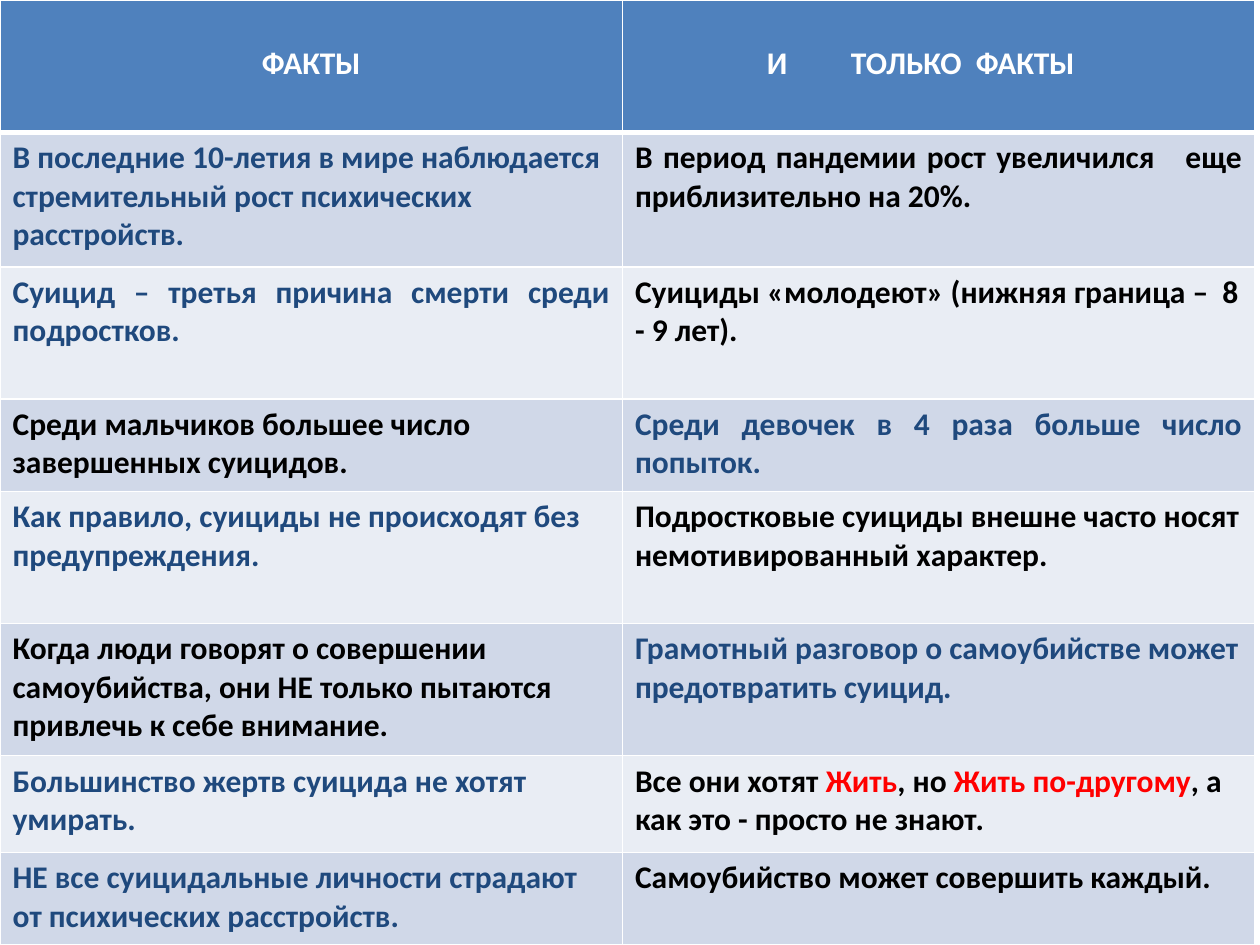
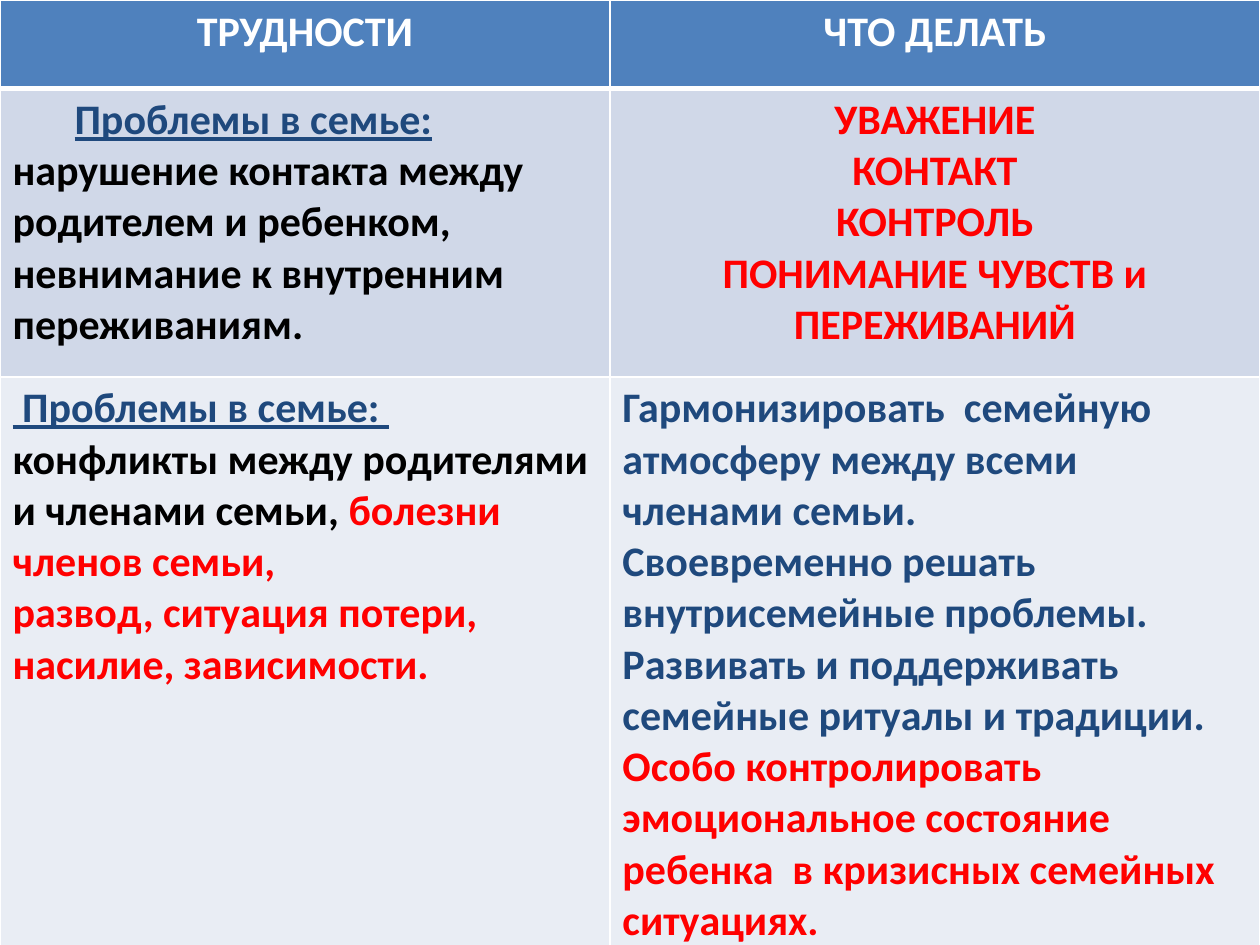
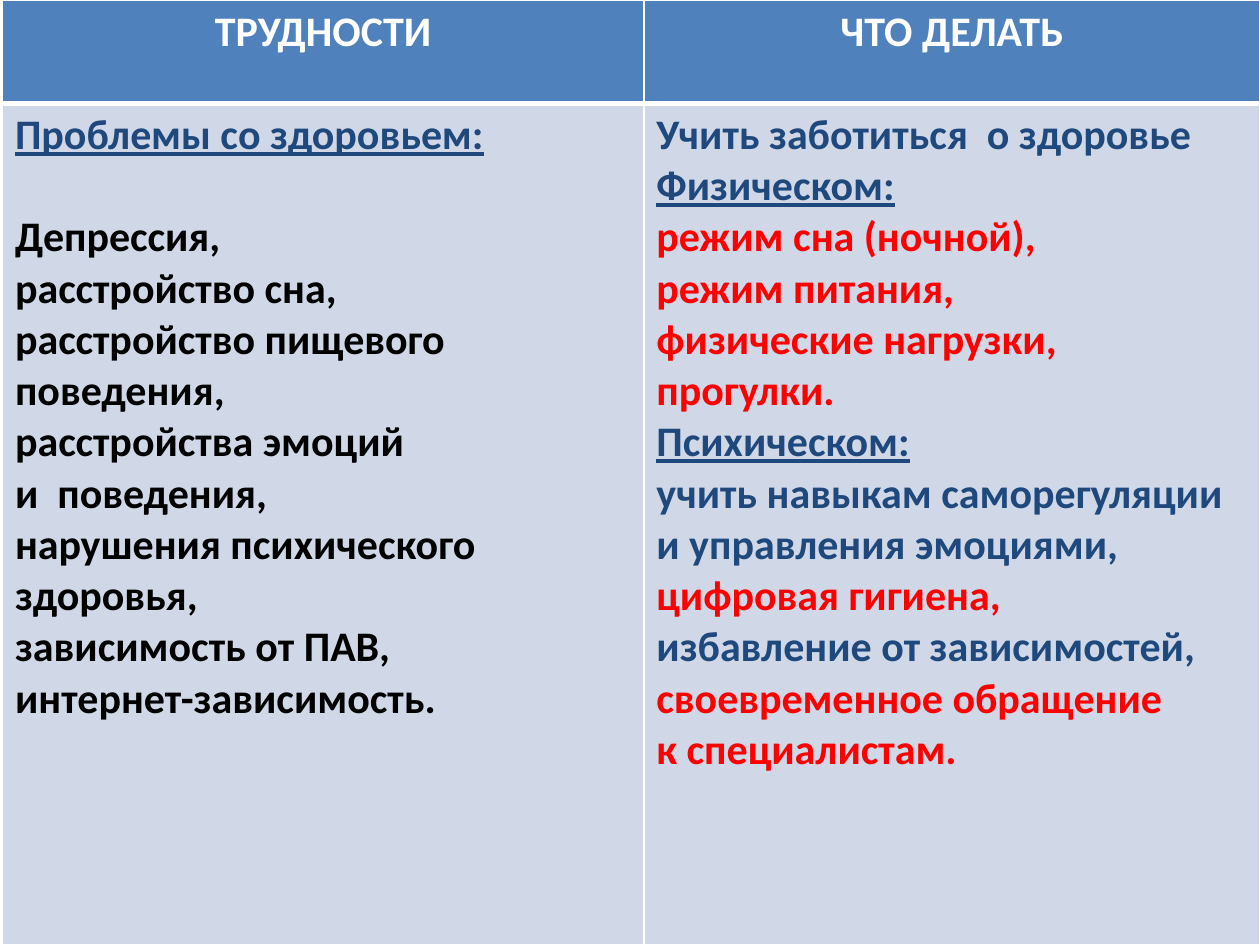
"""Builds three table slides on facts, difficulties and remedies."""
from lxml import etree
from pptx import Presentation
from pptx.dml import color as dml
from pptx.enum import text
from pptx.oxml import ns
from pptx.util import Pt

HUES = {
    "head": "4F81BD",
    "dark": "D0D8E8",
    "light": "E9EDF4",
    "white": "FFFFFF",
    "blue": "1F497D",
    "black": "000000",
    "red": "FF0000",
}
FONT = "Calibri"
MID, JUST = text.PP_ALIGN.CENTER, text.PP_ALIGN.JUSTIFY
PAGE = (720, 540)


def rgb(hue):
    """Give the colour stored under a name."""
    return dml.RGBColor.from_string(HUES[hue])


def write(par, words, size=18, hue="black", bold=True, under=False):
    """Add words to a paragraph, with a line break at each newline."""
    for i, line in enumerate(words.split("\n")):
        if i:
            par.add_line_break()
        run = par.add_run()
        run.text = line
        font = run.font
        font.name, font.size = FONT, Pt(size)
        font.bold, font.underline = bold, under
        font.color.rgb = rgb(hue)


def para(*runs, align=None, indent=0, after=0, tab=0):
    """Describe a paragraph of (hue, words) or (hue, words, under) runs."""
    return dict(runs=runs, align=align, indent=indent, after=after, tab=tab)


def lines(hue, *texts, align=None):
    """Describe one paragraph for each text, all in one hue."""
    return [para((hue, words), align=align) for words in texts]


class Deck:
    """Holds the style and the current slide."""

    def __init__(self):
        """Start an empty deck."""
        self.show = Presentation()
        self.show.slide_width, self.show.slide_height = map(Pt, PAGE)
        self.slide = None

    def page(self):
        """Add a blank slide."""
        self.slide = self.show.slides.add_slide(self.show.slide_layouts[6])

    def edge(self, cell, side, width):
        """Draw a white border on one side of a cell."""
        line = etree.SubElement(cell._tc.get_or_add_tcPr(), ns.qn("a:ln" + side), w=str(Pt(width)))
        fill = etree.SubElement(line, ns.qn("a:solidFill"))
        etree.SubElement(fill, ns.qn("a:srgbClr"), val=HUES["white"])

    def fill(self, cell, paras, size):
        """Write the described paragraphs into a cell."""
        frame = cell.text_frame
        for i, spec in enumerate(paras):
            par = frame.add_paragraph() if i else frame.paragraphs[0]
            par.alignment = spec["align"]
            if spec["after"]:
                par.space_after = Pt(spec["after"])
            props = par._p.get_or_add_pPr()
            if spec["indent"]:
                props.set("indent", str(Pt(spec["indent"])))
            if spec["tab"]:
                stops = etree.SubElement(props, ns.qn("a:tabLst"))
                etree.SubElement(stops, ns.qn("a:tab"), pos=str(Pt(spec["tab"])), algn="l")
            for hue, words, *under in spec["runs"]:
                write(par, words, size=size, hue=hue, under=bool(under))

    def table(self, cols, rows, cells, size, left=0):
        """Add a banded table with a header row."""
        shape = self.slide.shapes.add_table(
            len(rows), len(cols), Pt(left), 0, Pt(sum(cols)), Pt(sum(rows)))
        grid = shape.table
        for col, width in zip(grid.columns, cols):
            col.width = Pt(width)
        for r, (height, row) in enumerate(zip(rows, cells)):
            grid.rows[r].height = Pt(height)
            band = "head" if r == 0 else "dark" if r % 2 else "light"
            for c, paras in enumerate(row):
                cell = grid.cell(r, c)
                for side in "LRTB":
                    thick = (r, side) in ((0, "B"), (1, "T"))
                    self.edge(cell, side, 3 if thick else 1)
                cell.fill.solid()
                cell.fill.fore_color.rgb = rgb(band)
                self.fill(cell, paras, size)
        return grid


def facts(deck):
    """Build the slide of facts."""
    deck.page()
    cells = [
        (lines("white", "ФАКТЫ", align=MID),
         [para(("white", "И\tТОЛЬКО  ФАКТЫ"), tab=48)]),
        (lines("blue", "В последние 10-летия в мире наблюдается стремительный рост психических расстройств."),
         lines("black", "В период пандемии рост увеличился   еще приблизительно на 20%.", align=JUST)),
        (lines("blue", "Суицид – третья причина смерти среди подростков.", align=JUST),
         lines("black", "Суициды «молодеют» (нижняя граница –  8 - 9 лет).")),
        (lines("black", "Среди мальчиков большее число завершенных суицидов."),
         lines("blue", "Среди девочек в 4 раза больше число попыток.", align=JUST)),
        (lines("blue", "Как правило, суициды не происходят без предупреждения."),
         lines("black", "Подростковые суициды внешне часто носят немотивированный характер.")),
        (lines("black", "Когда люди говорят о совершении самоубийства, они НЕ только пытаются "
               "привлечь к себе внимание."),
         lines("blue", "Грамотный разговор о самоубийстве может предотвратить суицид.")),
        (lines("blue", "Большинство жертв суицида не хотят умирать."),
         [para(("black", "Все они хотят "), ("red", "Жить"), ("black", ", но "),
               ("red", "Жить по-другому"), ("black", ", а как это - просто не знают."))]),
        (lines("blue", "НЕ все суицидальные личности страдают от психических расстройств."),
         lines("black", "Самоубийство может совершить каждый.")),
    ]
    rows = (75.6, 77, 75.6, 52.6, 75.6, 75.6, 55.4, 52.6)
    grid = deck.table((355.7, 361.4), rows, cells, size=18)
    for cell in grid.rows[0].cells:
        cell.margin_top = Pt(25.6)
    grid.cell(0, 1).margin_left = Pt(82.6)


def pair():
    """Give the header row of the two advice slides."""
    return [lines("white", words, align=MID) for words in ("ТРУДНОСТИ", "ЧТО ДЕЛАТЬ")]


def family(deck):
    """Build the slide on family problems."""
    deck.page()
    cells = [
        pair(),
        ([para(("blue", "Проблемы в семье: ", True),
               ("black", "нарушение контакта между родителем и ребенком, "
                "невнимание к внутренним переживаниям."), indent=35.4)],
         lines("red", "УВАЖЕНИЕ", "КОНТАКТ", "КОНТРОЛЬ", "ПОНИМАНИЕ ЧУВСТВ и ПЕРЕЖИВАНИЙ", align=MID)),
        ([para(("blue", " Проблемы в семье: ", True)),
          para(("black", "конфликты между родителями и членами семьи, "), ("red", "болезни членов семьи,")),
          para(("red", "развод, ситуация потери, насилие, зависимости."))],
         lines("blue", "Гармонизировать  семейную атмосферу между всеми членами семьи.",
               "Своевременно решать внутрисемейные проблемы.",
               "Развивать и поддерживать семейные ритуалы и традиции.")
         + lines("red", "Особо контролировать эмоциональное состояние ребенка  "
                 "в кризисных семейных ситуациях.")),
    ]
    deck.table((348.5, 371.5), (50.4, 164.9, 324.7), cells, size=24)


def health(deck):
    """Build the slide on health problems."""
    deck.page()
    cells = [
        pair(),
        ([para(("blue", "Проблемы со здоровьем:", True), after=29.3)]
         + lines("black", "Депрессия,", "расстройство сна,", "расстройство пищевого поведения,",
                 "расстройства эмоций \nи  поведения,", "нарушения психического здоровья,",
                 "зависимость от ПАВ,", "интернет-зависимость."),
         lines("blue", "Учить заботиться  о здоровье")
         + [para(("blue", "Физическом:", True))]
         + lines("red", "режим сна (ночной),", "режим питания,", "физические нагрузки,", "прогулки.")
         + [para(("blue", "Психическом:", True))]
         + lines("blue", "учить навыкам саморегуляции и управления эмоциями,")
         + lines("red", "цифровая гигиена,")
         + [para(("blue", "избавление от зависимостей,"),
                 ("red", " своевременное обращение \nк специалистам."))]),
    ]
    deck.table((366.5, 352.1), (59, 481), cells, size=24, left=1.4)


def main():
    """Build and save the deck."""
    deck = Deck()
    for build in (facts, family, health):
        build(deck)
    deck.show.save("out.pptx")


if __name__ == "__main__":
    main()
